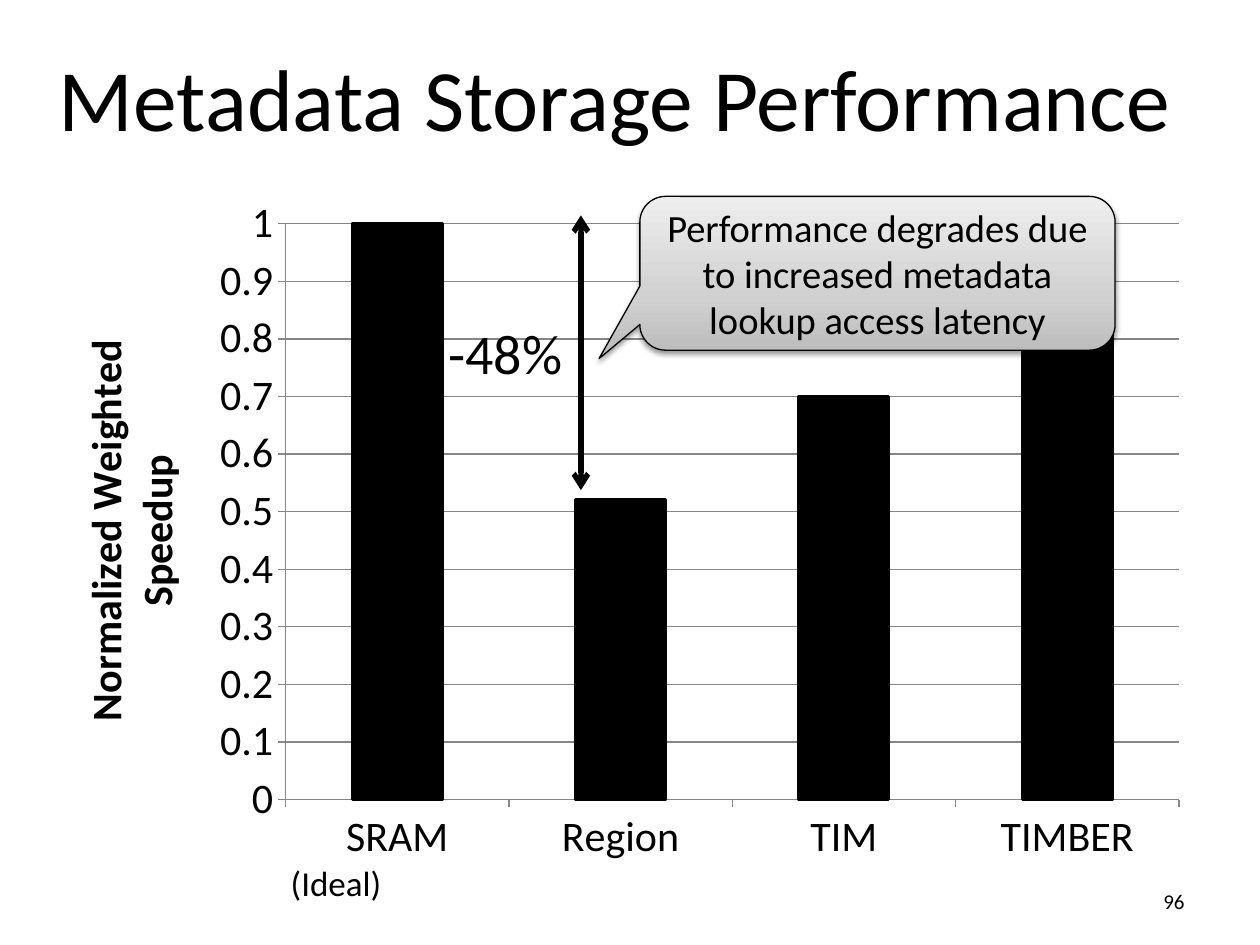
from lxml import etree
from pptx import Presentation, util as u
from pptx.chart.data import CategoryChartData
from pptx.dml.color import RGBColor
from pptx.enum import chart as ch, shapes, text
from pptx.oxml import parse_xml
from pptx.oxml.ns import nsdecls, qn

BLACK = RGBColor(0x00, 0x00, 0x00)
GRID_GRAY = RGBColor(0x86, 0x86, 0x86)
FONT = "Calibri"
CALLOUT_STOPS = ((0, RGBColor(0xBD, 0xBD, 0xBD)),
                 (35, RGBColor(0xD1, 0xD1, 0xD1)),
                 (100, RGBColor(0xEE, 0xEE, 0xEE)))
SPEEDUPS = {"SRAM": 1, "Region": 0.52, "TIM": 0.7, "TIMBER": 0.86}


def box(left, top, width, height):
    return [u.Cm(length) for length in (left, top, width, height)]


def style_font(font, size):
    font.name = FONT
    font.size = u.Pt(size)
    font.color.rgb = BLACK


def write(frame, wording, size, align, anchor, wrap=True):
    frame.word_wrap = wrap
    frame.vertical_anchor = anchor
    paragraph = frame.paragraphs[0]
    paragraph.alignment = align
    run = paragraph.add_run()
    run.text = wording
    style_font(run.font, size)


def add_label(slide, place, wording, size, align=text.PP_ALIGN.LEFT,
              anchor=text.MSO_ANCHOR.MIDDLE, wrap=True):
    label = slide.shapes.add_textbox(*box(*place))
    write(label.text_frame, wording, size, align, anchor, wrap)
    if not wrap:
        label.text_frame.auto_size = text.MSO_AUTO_SIZE.SHAPE_TO_FIT_TEXT


def place_plot(chart, **fractions):
    plot_area = chart._chartSpace.chart.plotArea
    for layout in plot_area.findall(qn("c:layout")):
        plot_area.remove(layout)
    settings = {"layoutTarget": "inner", "xMode": "edge", "yMode": "edge", **fractions}
    entries = "".join(f'<c:{key} val="{value}"/>' for key, value in settings.items())
    plot_area.insert(0, parse_xml(
        f'<c:layout {nsdecls("c")}><c:manualLayout>{entries}</c:manualLayout></c:layout>'))


def add_speedup_chart(slide, place):
    speedups = CategoryChartData()
    speedups.categories = list(SPEEDUPS)
    speedups.add_series("Series 1", list(SPEEDUPS.values()))
    chart = slide.shapes.add_chart(
        ch.XL_CHART_TYPE.COLUMN_CLUSTERED, *box(*place), speedups).chart
    chart.has_legend = False
    chart.has_title = False
    style_font(chart.font, 24)

    plot = chart.plots[0]
    plot.gap_width = 150
    plot.vary_by_categories = False
    bars = plot.series[0].format
    bars.fill.solid()
    bars.fill.fore_color.rgb = BLACK
    bars.line.color.rgb = BLACK
    bars.line.width = u.Pt(2)

    speedup_axis = chart.value_axis
    speedup_axis.minimum_scale = 0
    speedup_axis.maximum_scale = 1
    speedup_axis.major_unit = 0.1
    speedup_axis.has_major_gridlines = True
    speedup_axis.tick_labels.number_format = "General"
    speedup_axis.tick_labels.number_format_is_linked = False
    axis_title = speedup_axis.axis_title.text_frame.paragraphs[0].add_run()
    axis_title.text = "Normalized Weighted Speedup"
    style_font(axis_title.font, 24)
    axis_title.font.bold = True

    for axis in (speedup_axis, chart.category_axis):
        axis.major_tick_mark = ch.XL_TICK_MARK.OUTSIDE
    for part in (speedup_axis, chart.category_axis, speedup_axis.major_gridlines):
        part.format.line.color.rgb = GRID_GRAY
        part.format.line.width = u.Pt(0.75)
    place_plot(chart, x=0.207, y=0.056, w=0.774, h=0.831)


def add_drop_arrow(slide, x, top, bottom):
    arrow = slide.shapes.add_connector(
        shapes.MSO_CONNECTOR.STRAIGHT, u.Cm(x), u.Cm(top), u.Cm(x), u.Cm(bottom))
    arrow.line.color.rgb = BLACK
    arrow.line.width = u.Pt(3)
    outline = arrow.line._get_or_add_ln()
    for end in ("a:headEnd", "a:tailEnd"):
        etree.SubElement(outline, qn(end), type="arrow")
    etree.SubElement(arrow._element.spPr, qn("a:effectLst"))


def add_callout(slide, place, wording):
    callout = slide.shapes.add_shape(
        shapes.MSO_SHAPE.ROUNDED_RECTANGULAR_CALLOUT, *box(*place))
    for index, value in enumerate((-0.586, 0.555, 0.167)):
        callout.adjustments[index] = value
    callout.line.color.rgb = BLACK
    callout.line.width = u.Pt(0.75)
    stops = "".join(
        f'<a:gs pos="{percent * 1000}"><a:srgbClr val="{color}"/></a:gs>'
        for percent, color in CALLOUT_STOPS)
    gradient = parse_xml(
        f'<a:gradFill {nsdecls("a")}><a:gsLst>{stops}</a:gsLst>'
        '<a:lin ang="16200000" scaled="0"/></a:gradFill>')
    shadow = parse_xml(
        f'<a:effectLst {nsdecls("a")}><a:outerShdw blurRad="{u.Pt(3.1)}" '
        f'dist="{u.Pt(1.6)}" dir="5400000" rotWithShape="0"><a:srgbClr val="{BLACK}">'
        '<a:alpha val="38000"/></a:srgbClr></a:outerShdw></a:effectLst>')
    properties = callout._element.spPr
    properties.find(qn("a:prstGeom")).addnext(gradient)
    properties.find(qn("a:ln")).addnext(shadow)
    write(callout.text_frame, wording, 22, text.PP_ALIGN.CENTER, text.MSO_ANCHOR.MIDDLE)


def main():
    deck = Presentation()
    deck.slide_width, deck.slide_height = u.Cm(25.4), u.Cm(19.05)
    slide = deck.slides.add_slide(deck.slide_layouts[6])
    top = text.MSO_ANCHOR.TOP

    add_speedup_chart(slide, (0.94, 3.73, 23.27, 13.97))
    add_label(slide, (18.21, 17.65, 5.92, 1.02), "96", 12, align=text.PP_ALIGN.RIGHT)
    add_label(slide, (0.94, 1.17, 23.27, 1.57), "Metadata Storage Performance", 50)
    add_drop_arrow(slide, 11.71, 4.34, 9.88)
    add_label(slide, (8.79, 6.3, 2.84, 1.63), "-48%", 32, anchor=top, wrap=False)
    add_callout(slide, (12.9, 3.96, 9.58, 3.1),
                "Performance degrades due to increased metadata lookup access latency")
    add_label(slide, (5.61, 17.25, 2.36, 1.12), "(Ideal)", 20, anchor=top, wrap=False)
    deck.save("out.pptx")


if __name__ == "__main__":
    main()
